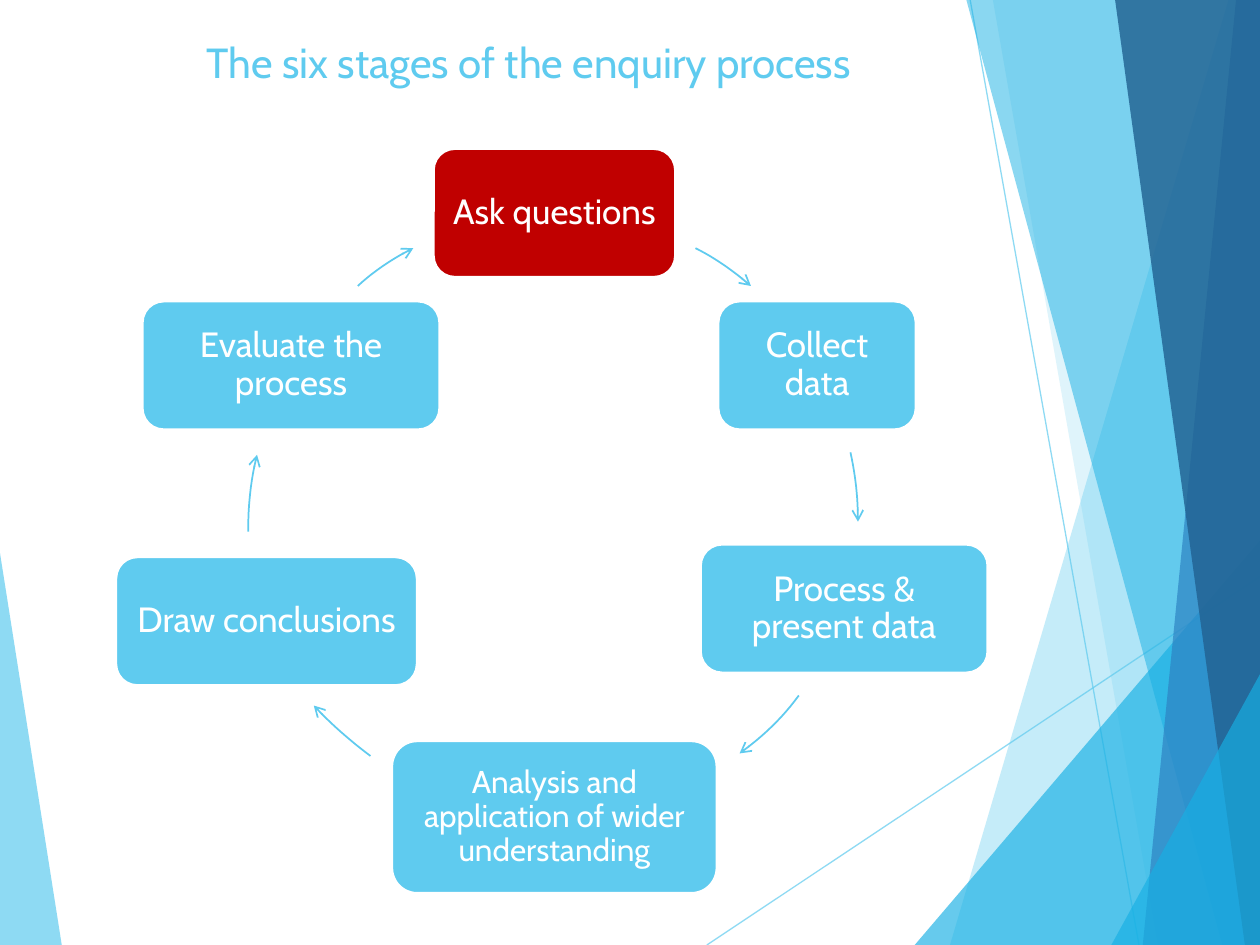
from lxml.etree import SubElement
from pptx import Presentation
from pptx.dml.color import RGBColor
from pptx.enum.shapes import MSO_CONNECTOR, MSO_SHAPE
from pptx.enum.text import MSO_ANCHOR, PP_ALIGN
from pptx.oxml.ns import qn
from pptx.util import Inches, Pt

# The slide is a grid of square cells, 100 columns by 75 rows
COLUMNS, ROWS = 100, 75
CELL = Inches(0.1)
FONT = "Cabin"

SKY = RGBColor(0x5F, 0xCB, 0xEF)
CYAN = RGBColor(0x17, 0xB0, 0xE4)
BLUE = RGBColor(0x2E, 0x83, 0xC3)
NAVY = RGBColor(0x22, 0x62, 0x92)
RED = RGBColor(0xC0, 0x00, 0x00)
WHITE = RGBColor(0xFF, 0xFF, 0xFF)

# Background facets: colour, opacity in percent, corners (column, row)
LEFT_FACET = (SKY, 70, [(0, 43.9), (4.9, ROWS), (0, ROWS)])
RIGHT_FACETS = [
    (SKY, 36, [(97.5, 0), (75.4, ROWS), (COLUMNS, ROWS), (COLUMNS, 0)]),
    (SKY, 20, [(78.8, 0), (91.9, ROWS), (COLUMNS, ROWS), (COLUMNS, 0)]),
    (CYAN, 66, [(72.6, ROWS), (COLUMNS, 42.9), (COLUMNS, ROWS)]),
    (CYAN, 50, [(76.7, 0), (97, ROWS), (COLUMNS, ROWS), (COLUMNS, 0)]),
    (BLUE, 70, [(98.1, 0), (90.7, ROWS), (COLUMNS, ROWS), (COLUMNS, 0)]),
    (NAVY, 82, [(88.5, 0), (98.8, ROWS), (COLUMNS, ROWS), (COLUMNS, 0)]),
    (CYAN, 66, [(88.2, ROWS), (COLUMNS, 53.5), (COLUMNS, ROWS)]),
]
RAYS = [((56.1, ROWS), (100.1, 45.7)), ((77, 0), (90.4, ROWS))]

# Stages, clockwise: text, left, top, width, height, fill, text size
STAGES = [
    ("Ask questions", 34.4, 11.8, 19.2, 10.2, RED, 20),
    ("Collect data", 57, 23.9, 15.7, 10.2, SKY, 20),
    ("Process & present data", 55.6, 43.2, 22.8, 10.2, SKY, 20),
    ("Analysis and application of wider understanding",
     31.1, 58.8, 25.8, 12.1, SKY, 18),
    ("Draw conclusions", 9.2, 44.2, 23.9, 10.2, SKY, 20),
    ("Evaluate the process", 11.3, 23.9, 23.6, 10.2, SKY, 20),
]
# Curves between the stages: start, two control points, end
CURVES = [
    ((55.2, 19.7), (56.8, 20.5), (58.2, 21.5), (59.6, 22.7)),
    ((67.5, 35.9), (67.9, 37.7), (68.1, 39.5), (68.1, 41.4)),
    ((63.4, 55.2), (62.1, 57), (60.5, 58.5), (58.7, 59.8)),
    ((29.4, 60), (27.8, 58.8), (26.3, 57.5), (24.9, 56)),
    ((19.7, 42.2), (19.7, 40.1), (19.9, 38.1), (20.4, 36.1)),
    ((28.4, 22.7), (29.7, 21.5), (31.2, 20.5), (32.8, 19.7)),
]


def cells(*counts):
    return [round(count * CELL) for count in counts]


def set_opacity(element, percent):
    for color in element.iter(qn("a:srgbClr")):
        SubElement(color, qn("a:alpha"), val=str(percent * 1000))


def add_outline(slide, points, close):
    start, *others = [cells(*point) for point in points]
    builder = slide.shapes.build_freeform(*start)
    builder.add_line_segments(others, close=close)
    shape = builder.convert_to_shape()
    shape.shadow.inherit = False
    return shape


def add_facet(slide, color, opacity, points):
    shape = add_outline(slide, points, close=True)
    shape.fill.solid()
    shape.fill.fore_color.rgb = color
    shape.line.fill.background()
    set_opacity(shape.fill._xPr, opacity)


def add_ray(slide, start, end):
    connector = slide.shapes.add_connector(
        MSO_CONNECTOR.STRAIGHT, *cells(*start, *end))
    connector.line.color.rgb = SKY
    connector.line.width = Pt(0.75)
    properties = connector._element.spPr
    set_opacity(properties, 70)
    SubElement(properties, qn("a:effectLst"))


def curve_point(controls, share):
    rest = 1 - share
    weights = (rest ** 3, 3 * rest ** 2 * share, 3 * rest * share ** 2, share ** 3)
    return [sum(weight * value for weight, value in zip(weights, axis))
            for axis in zip(*controls)]


def add_curved_arrow(slide, controls, steps=12):
    points = [curve_point(controls, step / steps) for step in range(steps + 1)]
    shape = add_outline(slide, points, close=False)
    shape.fill.background()
    shape.line.color.rgb = SKY
    shape.line.width = Pt(1)
    SubElement(shape.line._get_or_add_ln(), qn("a:tailEnd"), type="arrow")


def write(frame, text, size, color):
    frame.word_wrap = True
    paragraph = frame.paragraphs[0]
    paragraph.text = text
    paragraph.font.name = FONT
    paragraph.font.size = Pt(size)
    paragraph.font.color.rgb = color
    return paragraph


def add_stage(slide, text, left, top, width, height, fill, size):
    shape = slide.shapes.add_shape(
        MSO_SHAPE.ROUNDED_RECTANGLE, *cells(left, top, width, height))
    shape.shadow.inherit = False
    shape.fill.solid()
    shape.fill.fore_color.rgb = fill
    shape.line.color.rgb = WHITE
    shape.line.width = Pt(1.5)
    frame = shape.text_frame
    frame.vertical_anchor = MSO_ANCHOR.MIDDLE
    frame.margin_left = frame.margin_right = Pt(size * 0.28)
    frame.margin_top = frame.margin_bottom = Pt(size * 0.28)
    paragraph = write(frame, text, size, WHITE)
    paragraph.alignment = PP_ALIGN.CENTER
    paragraph.line_spacing = 0.9


def add_title(slide, text):
    box = slide.shapes.add_textbox(*cells(15.4, 2.4, 69.4, 14.4))
    write(box.text_frame, text, 24, SKY)


def main():
    presentation = Presentation()
    presentation.slide_width, presentation.slide_height = cells(COLUMNS, ROWS)
    slide = presentation.slides.add_slide(presentation.slide_layouts[6])

    # Background
    add_facet(slide, *LEFT_FACET)
    for start, end in RAYS:
        add_ray(slide, start, end)
    for facet in RIGHT_FACETS:
        add_facet(slide, *facet)

    # Cycle of stages
    for stage, curve in zip(STAGES, CURVES):
        add_stage(slide, *stage)
        add_curved_arrow(slide, curve)

    add_title(slide, "The six stages of the enquiry process")
    presentation.save("out.pptx")


if __name__ == "__main__":
    main()
